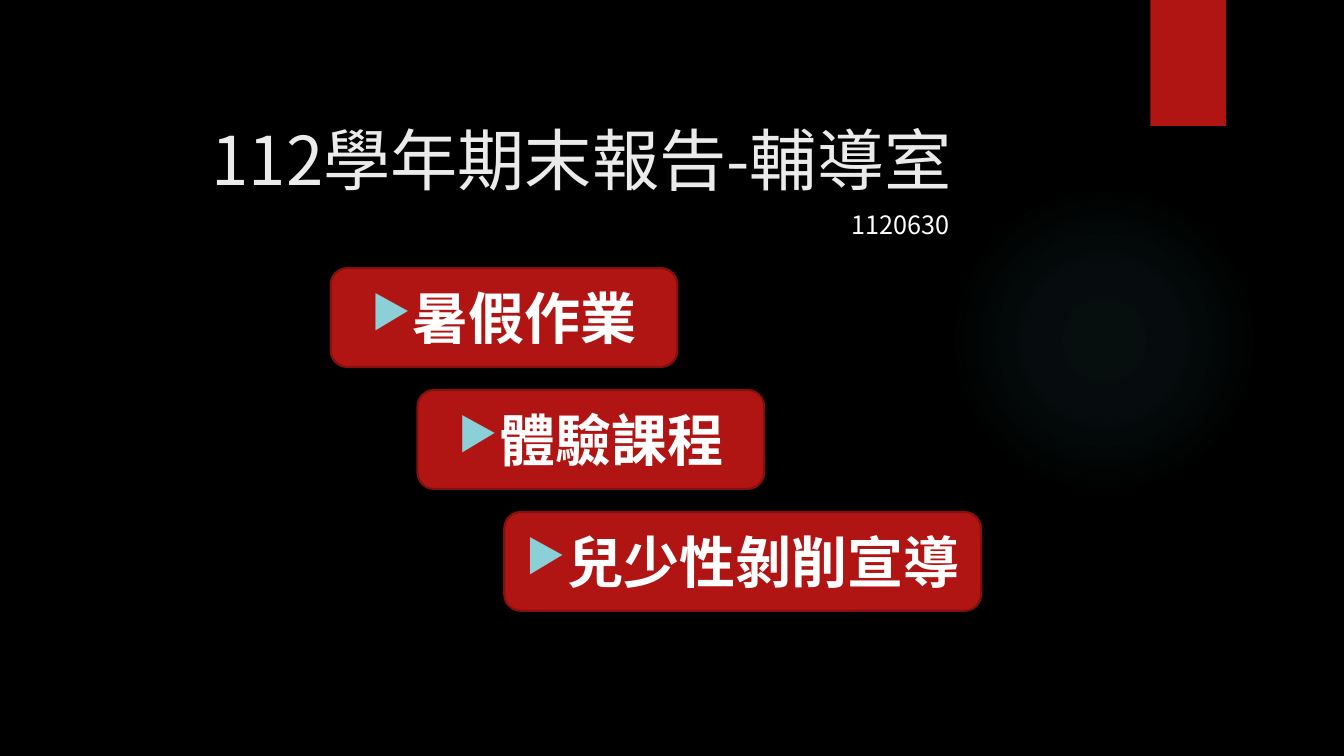
from lxml import etree
from pptx import Presentation
from pptx.dml.color import RGBColor
from pptx.enum.shapes import MSO_SHAPE
from pptx.enum.text import MSO_ANCHOR, PP_ALIGN
from pptx.oxml import parse_xml
from pptx.oxml.ns import nsdecls, qn
from pptx.util import Pt

OVAL, RECT, ROUNDED = MSO_SHAPE.OVAL, MSO_SHAPE.RECTANGLE, MSO_SHAPE.ROUNDED_RECTANGLE
MIDDLE, TOP = MSO_ANCHOR.MIDDLE, MSO_ANCHOR.TOP
CENTER, LEFT = PP_ALIGN.CENTER, PP_ALIGN.LEFT

TITLE = "112學年期末報告-輔導室"
DATE = "1120630"
TOPICS = [("暑假作業", 247.7), ("體驗課程", 247.7), ("兒少性剝削宣導", 340.6)]

FONT = "Noto Sans CJK SC"
COLORS = {
    "background": "000000",
    "red": "B01513",
    "outline": "82100E",
    "title": "EBEBEB",
    "text": "FFFFFF",
    "bullet": "8AD0D6",
    "glow": "50B9C1",
}
GLOW_STOPS = [(0, 7), (36, 6), (69, 0)]
TOPIC_LEFT, TOPIC_TOP, TOPIC_HEIGHT = 236.2, 191.5, 70.6
STEP_RIGHT, STEP_DOWN = 62, 87.1
BULLET_INDENT = 27


def rgb(name):
    return RGBColor.from_string(COLORS[name])


def add_block(slide, kind, left, top, width, height, fill):
    block = slide.shapes.add_shape(kind, Pt(left), Pt(top), Pt(width), Pt(height))
    block.shadow.inherit = False
    block.line.fill.background()
    block.fill.solid()
    block.fill.fore_color.rgb = rgb(fill)
    return block


def write(frame, text, size, color, bold=False, align=LEFT, anchor=TOP):
    frame.vertical_anchor = anchor
    paragraph = frame.paragraphs[0]
    paragraph.alignment = align
    run = paragraph.add_run()
    run.text = text
    run.font.size = Pt(size)
    run.font.bold = bold
    run.font.name = FONT
    run.font.color.rgb = rgb(color)
    east_asian = etree.SubElement(run.font._element, qn("a:ea"))
    east_asian.set("typeface", FONT)
    return paragraph


def add_bullet(paragraph):
    properties = paragraph._p.get_or_add_pPr()
    properties.set("marL", str(Pt(BULLET_INDENT)))
    properties.set("indent", str(-Pt(BULLET_INDENT)))
    color = etree.SubElement(properties, qn("a:buClr"))
    etree.SubElement(color, qn("a:srgbClr")).set("val", COLORS["bullet"])
    etree.SubElement(properties, qn("a:buSzPct")).set("val", "80000")
    etree.SubElement(properties, qn("a:buChar")).set("char", "▶")


def add_glow(slide):
    glow = add_block(slide, OVAL, 677.5, 131.8, 221.8, 221.8, "glow")
    stops = "".join(
        f'<a:gs pos="{position * 1000}"><a:srgbClr val="{COLORS["glow"]}">'
        f'<a:alpha val="{alpha * 1000}"/></a:srgbClr></a:gs>'
        for position, alpha in GLOW_STOPS
    )
    gradient = parse_xml(
        f'<a:gradFill {nsdecls("a")}><a:gsLst>{stops}</a:gsLst><a:path path="circle">'
        '<a:fillToRect l="50000" t="50000" r="50000" b="50000"/></a:path></a:gradFill>'
    )
    properties = glow._element.spPr
    properties.replace(properties.find(qn("a:solidFill")), gradient)


def add_text(slide, text, left, top, width, height, size, color, wrap):
    box = slide.shapes.add_textbox(Pt(left), Pt(top), Pt(width), Pt(height))
    box.text_frame.word_wrap = wrap
    return write(box.text_frame, text, size, color)


def main():
    deck = Presentation()
    deck.slide_width, deck.slide_height = Pt(960), Pt(540)
    slide = deck.slides.add_slide(deck.slide_layouts[6])
    slide.background.fill.solid()
    slide.background.fill.fore_color.rgb = rgb("background")

    add_glow(slide)
    add_block(slide, RECT, 821.8, 0, 54, 90, "red")
    title = add_text(slide, TITLE, 144, 87.8, 621.4, 70.6, 48, "title", True)
    title.line_spacing = 0.9

    for row, (topic, width) in enumerate(TOPICS):
        left = TOPIC_LEFT + row * STEP_RIGHT
        top = TOPIC_TOP + row * STEP_DOWN
        button = add_block(slide, ROUNDED, left, top, width, TOPIC_HEIGHT, "red")
        button.line.color.rgb = rgb("outline")
        button.line.width = Pt(1.5)
        button.text_frame.word_wrap = True
        add_bullet(write(button.text_frame, topic, 40, "text", True, CENTER, MIDDLE))

    add_text(slide, DATE, 601.2, 146.2, 86.4, 28.8, 18, "text", False)
    deck.save("out.pptx")


if __name__ == "__main__":
    main()
